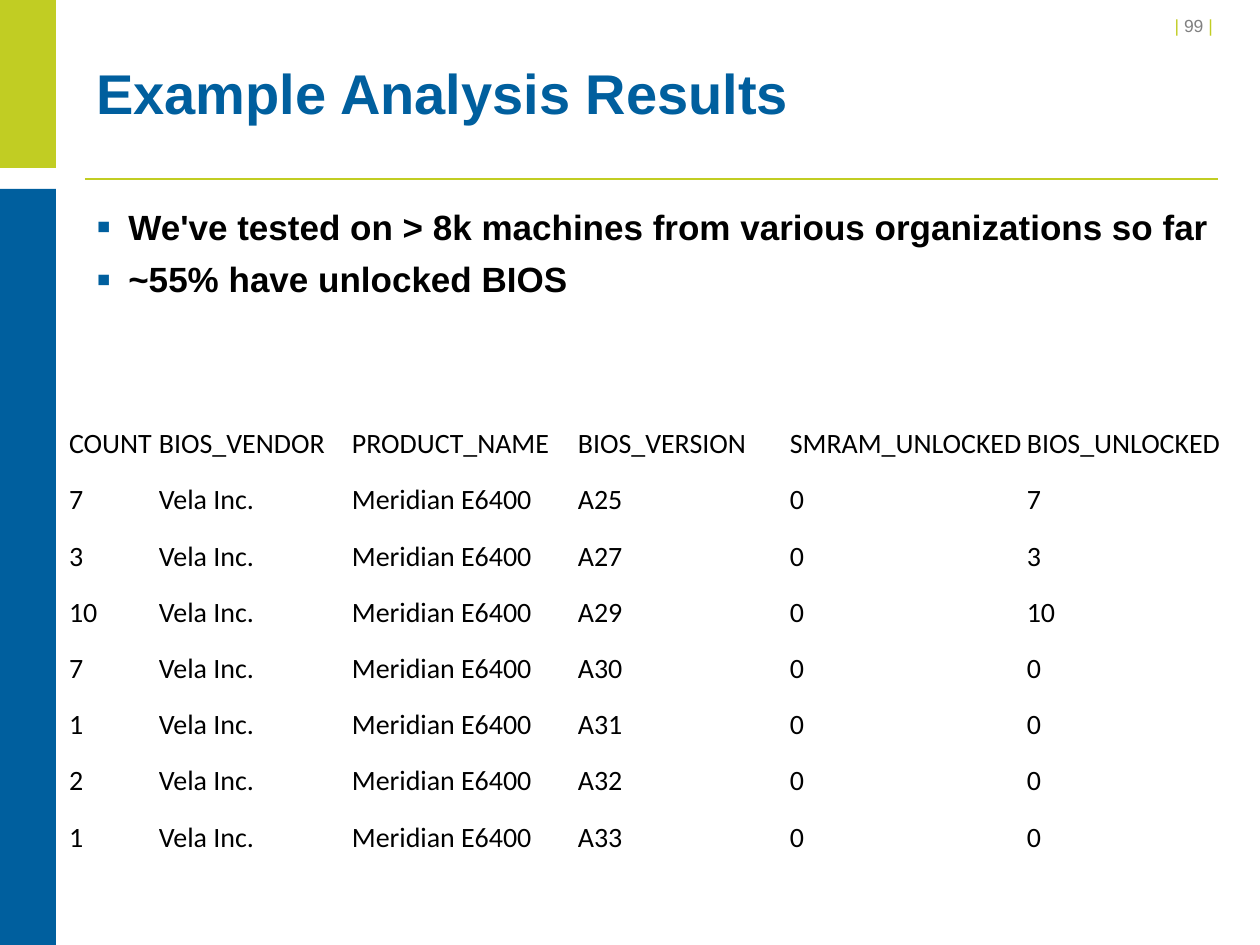
from pptx import Presentation
from pptx.dml.color import RGBColor as RGB
from pptx.enum.shapes import MSO_CONNECTOR as CONN, MSO_SHAPE as SHAPE
from pptx.enum.text import MSO_ANCHOR as ANCHOR, PP_ALIGN as ALIGN
from pptx.oxml import parse_xml
from pptx.oxml.ns import nsdecls
from pptx.util import Pt

# Content
TITLE = "Example Analysis Results"
POINTS = [
    "We've tested on > 8k machines from various organizations so far",
    "~55% have unlocked BIOS",
]
PAGE = [("| ", "lime"), ("99 ", "gray"), ("| ", "lime")]
HEADS = ["COUNT", "BIOS_VENDOR", "PRODUCT_NAME", "BIOS_VERSION",
         "SMRAM_UNLOCKED", "BIOS_UNLOCKED"]
MAKER, MODEL = "Vela Inc.", "Meridian E6400"
COUNTS = [  # count, version, SMRAM unlocked, BIOS unlocked
    (7, "A25", 0, 7),
    (3, "A27", 0, 3),
    (10, "A29", 0, 10),
    (7, "A30", 0, 0),
    (1, "A31", 0, 0),
    (2, "A32", 0, 0),
    (1, "A33", 0, 0),
]
COLORS = {"lime": "C1CD23", "blue": "005F9E", "gray": "808080", "black": "000000"}

# Layout in px
SCALE = 914400 // 126
BARS = [(0, 0, 56, 168, "lime"), (0, 189, 56, 756, "blue")]
WIDTHS = [90, 193, 226, 212, 237, 211]
GRID_X, GRID_Y, GRID_H = 68, 405, 450


def px(*vals):
    return [round(v * SCALE) for v in vals]


def color(name):
    return RGB.from_string(COLORS[name])


def style(font, size, name, bold=False, face="Arial"):
    font.size, font.bold, font.name = Pt(size), bold, face
    font.color.rgb = color(name)


def add_box(*place):
    frame = slide.shapes.add_textbox(*px(*place)).text_frame
    frame.word_wrap = True
    return frame


def add_bullet(para):
    props = para._p.get_or_add_pPr()
    indent = px(32)[0]
    props.set("marL", str(indent))
    props.set("indent", str(-indent))
    for tag in (f'<a:buClr {{}}><a:srgbClr val="{COLORS["blue"]}"/></a:buClr>',
                '<a:buSzPct {} val="120000"/>',
                '<a:buFont {} typeface="Arial"/>',
                '<a:buChar {} char="▪"/>'):
        props.append(parse_xml(tag.format(nsdecls("a"))))


deck = Presentation()
deck.slide_width, deck.slide_height = px(1260, 945)
slide = deck.slides.add_slide(deck.slide_layouts[6])

# Rule under the title
rule = slide.shapes.add_connector(CONN.STRAIGHT, *px(85, 179, 1218, 179))
rule.line.color.rgb = color("lime")
rule.line.width = Pt(1)
rule._element.spPr.append(parse_xml(f"<a:effectLst {nsdecls('a')}/>"))

# Side bars
for *place, name in BARS:
    bar = slide.shapes.add_shape(SHAPE.RECTANGLE, *px(*place))
    bar.shadow.inherit = False
    bar.fill.solid()
    bar.fill.fore_color.rgb = color(name)
    bar.line.fill.background()

# Page number
para = add_box(1009, 9, 221, 34).paragraphs[0]
para.alignment = ALIGN.RIGHT
para.space_after = Pt(6)
for text, name in PAGE:
    run = para.add_run()
    run.text = text
    style(run.font, 10, name)

# Title
frame = add_box(84, 38, 1134, 120)
frame.vertical_anchor = ANCHOR.MIDDLE
frame.text = TITLE
para = frame.paragraphs[0]
para.line_spacing = Pt(32)
style(para.runs[0].font, 32, "blue", True)

# Bullet points
frame = add_box(84, 199, 1176, 645)
frame.text = "\n".join(POINTS)
for para in frame.paragraphs:
    para.space_after = Pt(6)
    add_bullet(para)
    style(para.runs[0].font, 20, "black", True)

# Results table
rows = [HEADS] + [(n, MAKER, MODEL, ver, smram, bios)
                  for n, ver, smram, bios in COUNTS]
table = slide.shapes.add_table(
    len(rows), len(HEADS), *px(GRID_X, GRID_Y, sum(WIDTHS), GRID_H)).table
table.first_row = table.horz_banding = False
for col, width in zip(table.columns, px(*WIDTHS)):
    col.width = width
for r, row in enumerate(rows):
    table.rows[r].height = px(GRID_H / len(rows))[0]
    for c, value in enumerate(row):
        cell = table.cell(r, c)
        cell.fill.background()
        cell.vertical_anchor = ANCHOR.BOTTOM
        cell.margin_left, cell.margin_top, cell.margin_right, cell.margin_bottom = px(1, 1, 1, 0)
        cell.text = str(value)
        style(cell.text_frame.paragraphs[0].runs[0].font, 16, "black", face="Calibri")

deck.save("out.pptx")
